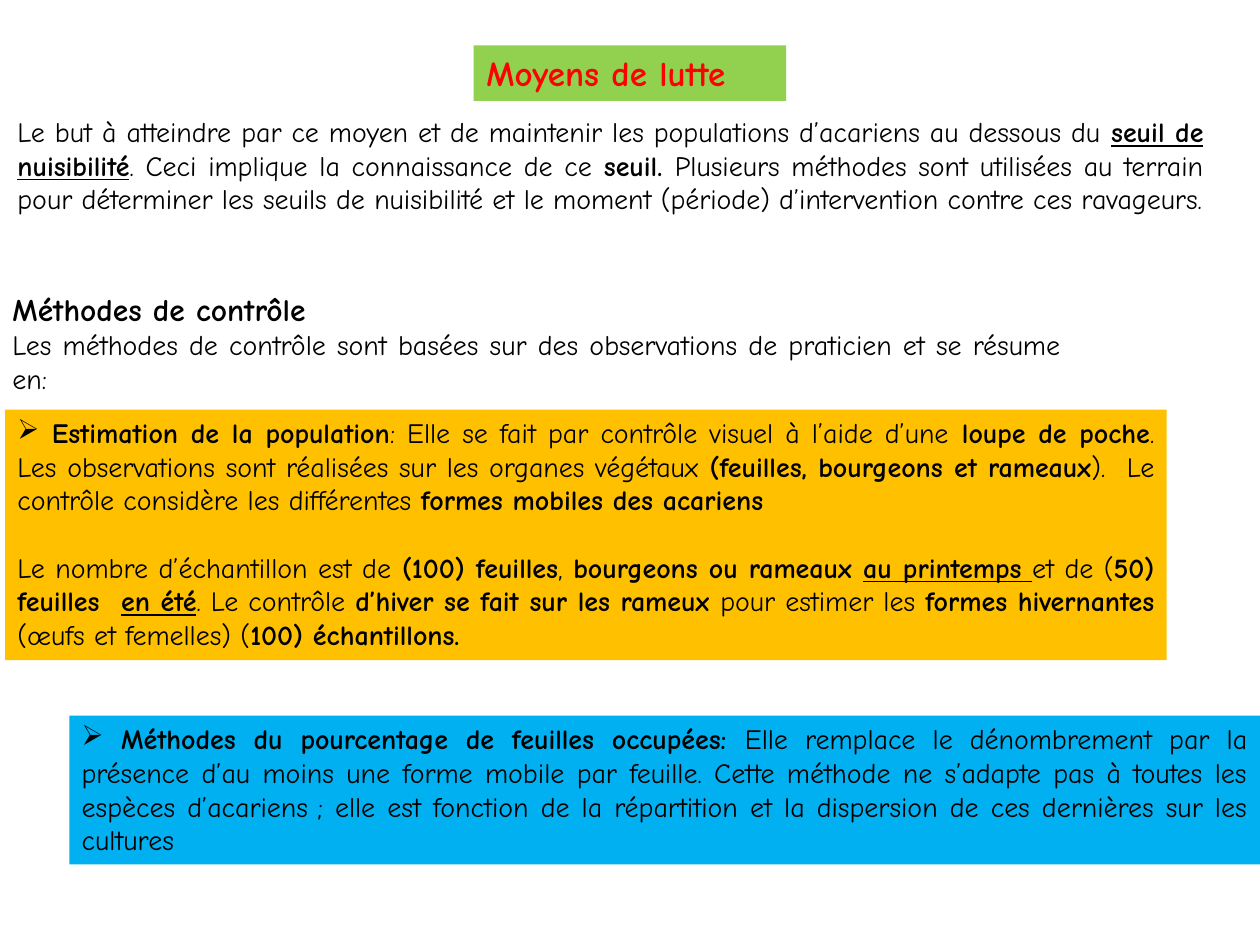
from lxml import etree
from pptx import Presentation
from pptx.dml.color import RGBColor
from pptx.enum.shapes import MSO_SHAPE
from pptx.enum.text import MSO_ANCHOR, MSO_AUTO_SIZE, PP_ALIGN
from pptx.oxml.ns import qn
from pptx.util import Inches, Pt

FONT = "Comic Neue"
BLACK = RGBColor(0x00, 0x00, 0x00)
RED = RGBColor(0xFF, 0x00, 0x00)
GREEN = RGBColor(0x92, 0xD0, 0x50)
ORANGE = RGBColor(0xFF, 0xC0, 0x00)
BLUE = RGBColor(0x00, 0xB0, 0xF0)
RECT = MSO_SHAPE.RECTANGLE
TOP = MSO_ANCHOR.TOP
NO_FIT = MSO_AUTO_SIZE.NONE
LEFT, JUSTIFY = PP_ALIGN.LEFT, PP_ALIGN.JUSTIFY

# Each run is (text, style): "b" is bold, "u" is underlined.
GOAL = [
    ("Le but à atteindre par ce moyen et de maintenir les populations d’acariens au dessous du ", ""),
    ("seuil de nuisibilité", "bu"),
    (". Ceci implique la connaissance de ce ", ""),
    ("seuil. ", "b"),
    ("Plusieurs méthodes sont utilisées au terrain pour déterminer les seuils de nuisibilité "
     "et le moment (période) d’intervention contre ces ravageurs.", ""),
]
CONTROL = [
    ("Les méthodes de contrôle sont basées sur des observations de praticien et se résume en:", ""),
]
ESTIMATION = [
    (" ", ""),
    ("Estimation de la population", "b"),
    (": Elle se fait par contrôle visuel à l’aide d’une", ""),
    (" loupe de poche", "b"),
    (". Les observations sont réalisées sur les organes végétaux ", ""),
    ("(feuilles, bourgeons et rameaux", "b"),
    (").  Le contrôle considère les différentes ", ""),
    ("formes mobiles des acariens", "b"),
]
SAMPLES = [
    ("Le nombre d’échantillon est de ", ""),
    ("(100) feuilles", "b"),
    (", ", ""),
    ("bourgeons ou rameaux ", "b"),
    ("au printemps", "bu"),
    (" ", "u"),
    ("et de (", ""),
    ("50) feuilles  ", "b"),
    ("en été", "bu"),
    (". Le contrôle ", ""),
    ("d’hiver se fait sur les rameux ", "b"),
    ("pour estimer les ", ""),
    ("formes hivernantes ", "b"),
    ("(œufs et femelles) (", ""),
    ("100) échantillons.", "b"),
]
PERCENTAGE = [
    (" ", ""),
    ("Méthodes du pourcentage de feuilles occupées: ", "b"),
    ("Elle remplace le dénombrement par la présence d’au moins une forme mobile par feuille. "
     "Cette méthode ne s’adapte pas à toutes les espèces d’acariens\u00a0; elle est fonction de "
     "la répartition et la dispersion de ces dernières sur les cultures ", ""),
]


def write(p, runs, size=16, color=BLACK, align=JUSTIFY, bullet=None, after=0):
    p.alignment = align
    p.space_after = Pt(after)
    if bullet:
        pPr = p._p.get_or_add_pPr()
        etree.SubElement(pPr, qn("a:buChar")).set("char", bullet)
    for text, style in runs:
        r = p.add_run()
        r.text = text
        r.font.name = FONT
        r.font.size = Pt(size)
        r.font.color.rgb = color
        r.font.bold = "b" in style
        r.font.underline = "u" in style


def prepare_text(sp):
    tf = sp.text_frame
    tf.word_wrap = True
    tf.auto_size = NO_FIT
    tf.vertical_anchor = TOP
    return tf


def add_text(s, x, y, w, h):
    return prepare_text(s.shapes.add_textbox(Inches(x), Inches(y), Inches(w), Inches(h)))


def add_panel(s, x, y, w, h, color):
    sp = s.shapes.add_shape(RECT, Inches(x), Inches(y), Inches(w), Inches(h))
    sp.shadow.inherit = False
    sp.fill.solid()
    sp.fill.fore_color.rgb = color
    sp.line.fill.background()
    return prepare_text(sp)


def set_title(s, text):
    sp = s.shapes.title
    sp.left, sp.top, sp.width, sp.height = (Inches(v) for v in (3.76, 0.36, 2.48, 0.44))
    sp.fill.solid()
    sp.fill.fore_color.rgb = GREEN
    write(prepare_text(sp).paragraphs[0], [(text, "b")], size=20, color=RED)


def main():
    prs = Presentation()
    prs.slide_width, prs.slide_height = Inches(10), Inches(7.5)
    s = prs.slides.add_slide(prs.slide_layouts[5])

    set_title(s, "Moyens de lutte ")

    tf = add_text(s, 0.04, 0.86, 9.61, 1.18)
    write(tf.paragraphs[0], GOAL)

    tf = add_text(s, 0, 2.25, 8.52, 0.94)
    write(tf.paragraphs[0], [("Méthodes de contrôle", "b")], size=18, align=LEFT)
    write(tf.add_paragraph(), CONTROL)

    tf = add_panel(s, 0.04, 3.25, 9.22, 1.99, ORANGE)
    write(tf.paragraphs[0], ESTIMATION, bullet="➢", after=19.2)
    write(tf.add_paragraph(), SAMPLES)

    tf = add_panel(s, 0.55, 5.68, 9.45, 1.18, BLUE)
    write(tf.paragraphs[0], PERCENTAGE, bullet="➢")

    prs.save("out.pptx")


if __name__ == "__main__":
    main()
